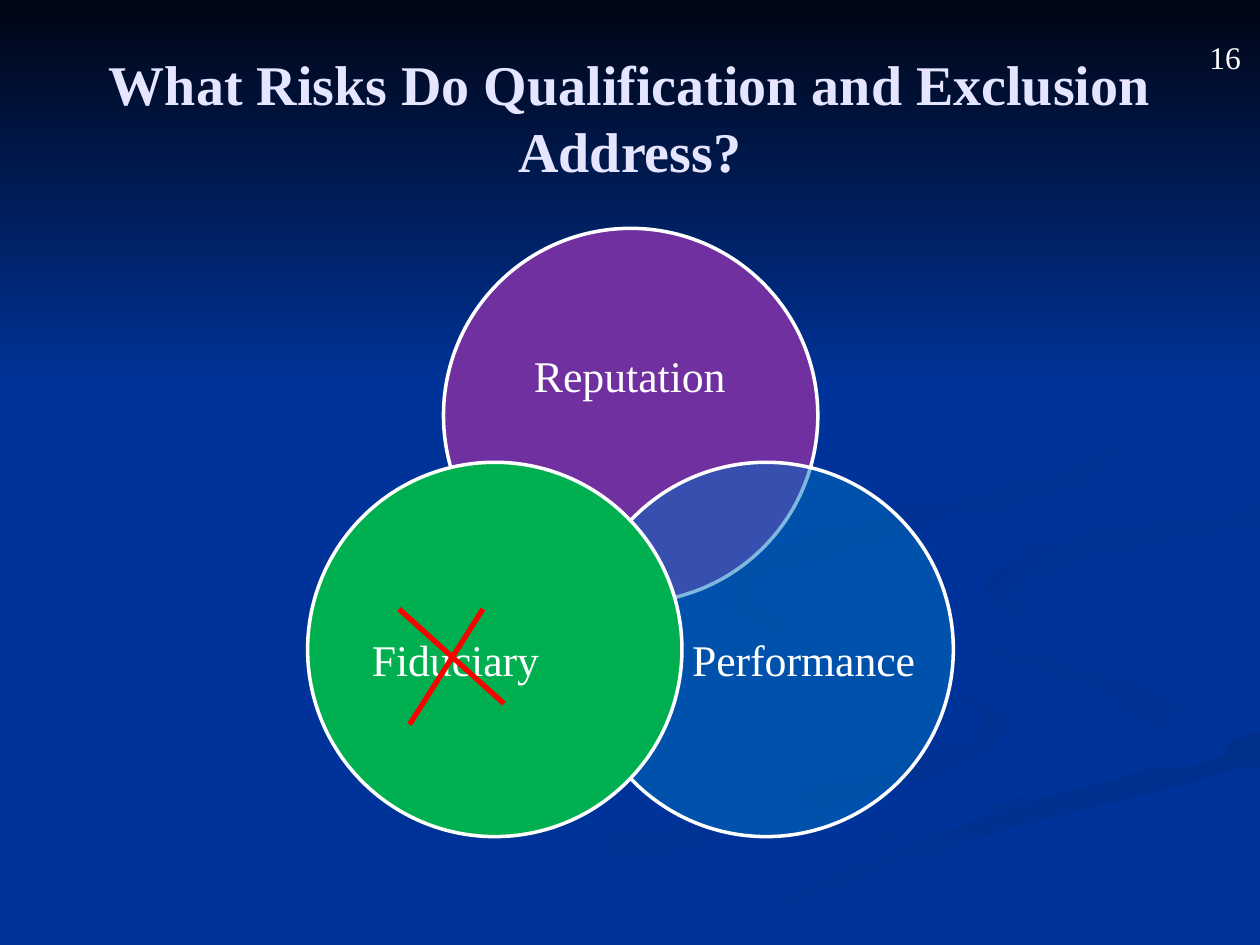
from math import hypot

from lxml import etree
from pptx import Presentation
from pptx.dml.color import RGBColor
from pptx.enum import shapes, text
from pptx.oxml.ns import qn
from pptx.util import Emu, Inches, Pt

# Slide grid: 120 columns by 90 rows of square cells
WIDE, HIGH = Inches(10), Inches(7.5)
CELL = WIDE / 120
FONT = "Times New Roman"
HUES = {
    "blue": "003399", "night": "000514", "title": "E5E5FF", "white": "FFFFFF",
    "violet": "7030A0", "azure": "0070C0", "green": "00B050", "red": "FF0000",
    "dim": "003193", "deep": "002F8C", "soft": "003091", "shade": "002F8E",
}

# Ribbons: from, to, angle, knots of (x, y, half width) in % of slide width
WAVES = [
    ("blue", "dim", 0, [
        (57, 46, .1), (63, 50.5, .2), (76, 54.8, .3), (79, 58, .8),
        (73, 61, .7), (58, 65, .9), (42, 70, 1.3), (33, 75, 2.4)]),
    ("blue", "dim", 45, [
        (72, 46, .1), (78, 51, .5), (87, 54, .7), (93, 57.5, 1.3),
        (89, 60.5, .1)]),
    ("deep", "blue", 90, [
        (53, 75, 1.5), (65, 69.7, 1.1), (79, 65, 1.2), (100, 59.5, 1.4)]),
    ("blue", "blue", 0, [
        (100, 39.5, .8), (85, 42, .8), (75.5, 46, 2.5), (88, 52, 1.5),
        (96.5, 57, 2.3), (80, 64, .4), (49, 75, .8)]),
    ("soft", "blue", 45, [
        (100, 41, .9), (88, 43, 1), (79.3, 46.3, 1.2), (82.6, 49.6, .1)]),
    ("shade", "blue", 45, [
        (76, 23, .1), (86, 28.5, .2), (89, 33.5, .3), (85.5, 38, .8),
        (70, 41.8, .8), (58.5, 46, .8), (62, 50, .1)]),
]

# Name, fill, opacity, circle place and label box, as shares of the circle
RINGS = [
    ("Reputation", "violet", 100, (.363, 0), (.13, .175, .735, .45)),
    ("Performance", "azure", 50, (.725, .625), (.3, .26, .6, .55)),
    ("Fiduciary", "green", 100, (0, .625), (.095, .26, .6, .55)),
]


def hue(name):
    return RGBColor.from_string(HUES[name])


def cells(*spots):
    return [Emu(round(spot * CELL)) for spot in spots]


def write(slide, words, box, size, tint="white", bold=False, mid=True,
          pad=None, gap=None):
    frame = slide.shapes.add_textbox(*cells(*box)).text_frame
    frame.word_wrap = True
    if mid:
        frame.vertical_anchor = text.MSO_ANCHOR.MIDDLE
    if pad is not None:
        frame.margin_left = frame.margin_right = pad
        frame.margin_top = frame.margin_bottom = pad
    line = frame.paragraphs[0]
    line.alignment = text.PP_ALIGN.CENTER if mid else text.PP_ALIGN.LEFT
    if gap:
        line.line_spacing = gap
    run = line.add_run()
    run.text = words
    run.font.name, run.font.size, run.font.bold = FONT, Pt(size), bold
    run.font.color.rgb = hue(tint)


def smooth(knots, steps=6):
    """Points on a Catmull-Rom curve through the knots."""
    ends = [knots[0], *knots, knots[-1]]
    track = []
    for four in zip(ends, ends[1:], ends[2:], ends[3:]):
        for step in range(steps):
            t = step / steps
            track.append([
                b + t / 2 * (c - a + t * (2 * a - 5 * b + 4 * c - d
                                          + t * (3 * (b - c) + d - a)))
                for a, b, c, d in zip(*four)])
    return track + [knots[-1]]


def ribbon(knots):
    """Outline of a curved band, kept inside the slide."""
    track = smooth(knots)
    near, far = [], []
    for i, (x, y, half) in enumerate(track):
        back, ahead = track[max(i - 1, 0)], track[min(i + 1, len(track) - 1)]
        dx, dy = ahead[0] - back[0], ahead[1] - back[1]
        span = hypot(dx, dy)
        for side, sign in ((near, 1), (far, -1)):
            side.append((min(x - sign * half * dy / span, 100),
                         min(y + sign * half * dx / span, 75)))
    return near + far[::-1]


def paint(shape, start, end, angle):
    shape.shadow.inherit = False
    shape.line.fill.background()
    if start == end:
        shape.fill.solid()
        shape.fill.fore_color.rgb = hue(start)
        return
    shape.fill.gradient()
    shape.fill.gradient_angle = -angle % 360
    for stop, tint in zip(shape.fill.gradient_stops, (start, end)):
        stop.color.rgb = hue(tint)


def backdrop(slide, box):
    fill = slide.background.fill
    fill.solid()
    fill.fore_color.rgb = hue("blue")
    # Waves
    for start, end, angle, knots in WAVES:
        spots = ribbon(knots)
        pen = slide.shapes.build_freeform(*spots[0], scale=WIDE / 100)
        pen.add_line_segments(spots[1:], close=True)
        paint(pen.convert_to_shape(), start, end, angle)
    # Night sky across the top
    sky = slide.shapes.add_shape(shapes.MSO_SHAPE.RECTANGLE, *cells(*box))
    paint(sky, "night", "blue", 90)


def header(slide, box):
    left, top, wide, high = box
    write(slide, "16", (left + wide, top - .6, 6, 4.8), 18, mid=False)
    write(slide, "What Risks Do Qualification and Exclusion Address?",
          box, 32, tint="title", bold=True)


def venn(slide, box):
    left, top, wide, high = box
    size = wide / 1.725
    for name, tint, solid, (col, row), (dx, dy, dw, dh) in RINGS:
        x, y = left + col * size, top + row * size
        ring = slide.shapes.add_shape(shapes.MSO_SHAPE.OVAL,
                                      *cells(x, y, size, size))
        ring.shadow.inherit = False
        ring.fill.solid()
        ring.fill.fore_color.rgb = hue(tint)
        if solid < 100:
            shade = ring._element.spPr.find(qn("a:solidFill"))[0]
            etree.SubElement(shade, qn("a:alpha"), val=str(solid * 1000))
        ring.line.color.rgb = hue("white")
        ring.line.width = Pt(2)
        spot = (x + dx * size, y + dy * size, dw * size, dh * size)
        write(slide, name, spot, 25, pad=0, gap=.9)


def cross(slide, box):
    left, top, wide, high = box
    strokes = [(left, top, left + wide, top + .82 * high),
               (left + .8 * wide, top, left + .1 * wide, top + high)]
    for ends in strokes:
        bar = slide.shapes.add_connector(shapes.MSO_CONNECTOR.STRAIGHT,
                                         *cells(*ends))
        bar.line.color.rgb = hue("red")
        bar.line.width = Pt(3)
        etree.SubElement(bar._element.spPr, qn("a:effectLst"))


def main():
    deck = Presentation()
    deck.slide_width, deck.slide_height = WIDE, HIGH
    slide = deck.slides.add_slide(deck.slide_layouts[6])
    backdrop(slide, (0, 0, 120, 37))
    header(slide, (6, 3.6, 108, 15))
    venn(slide, (29.3, 21.75, 61.5, 57.9))
    cross(slide, (38, 58, 10, 11))
    deck.save("out.pptx")


if __name__ == "__main__":
    main()
